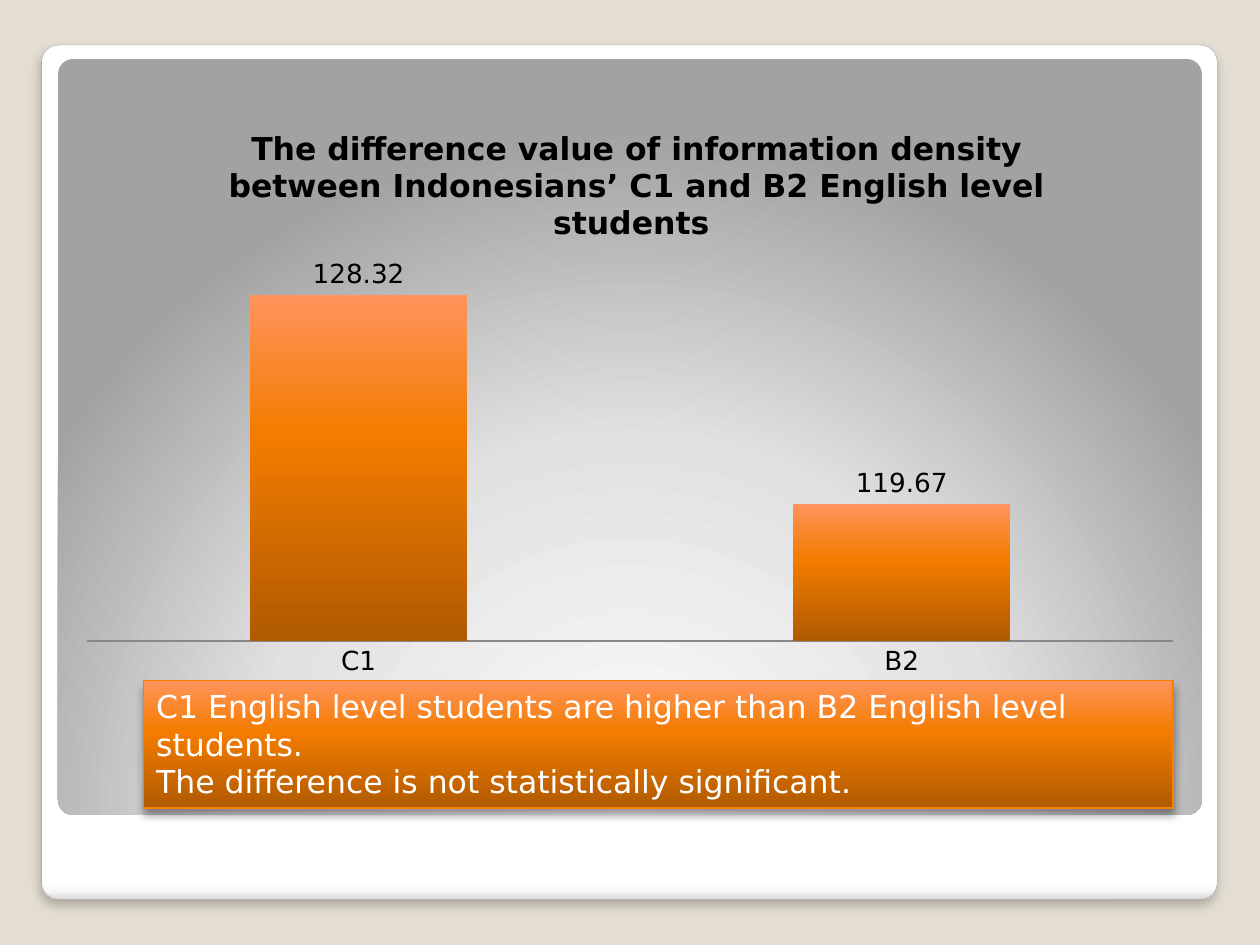
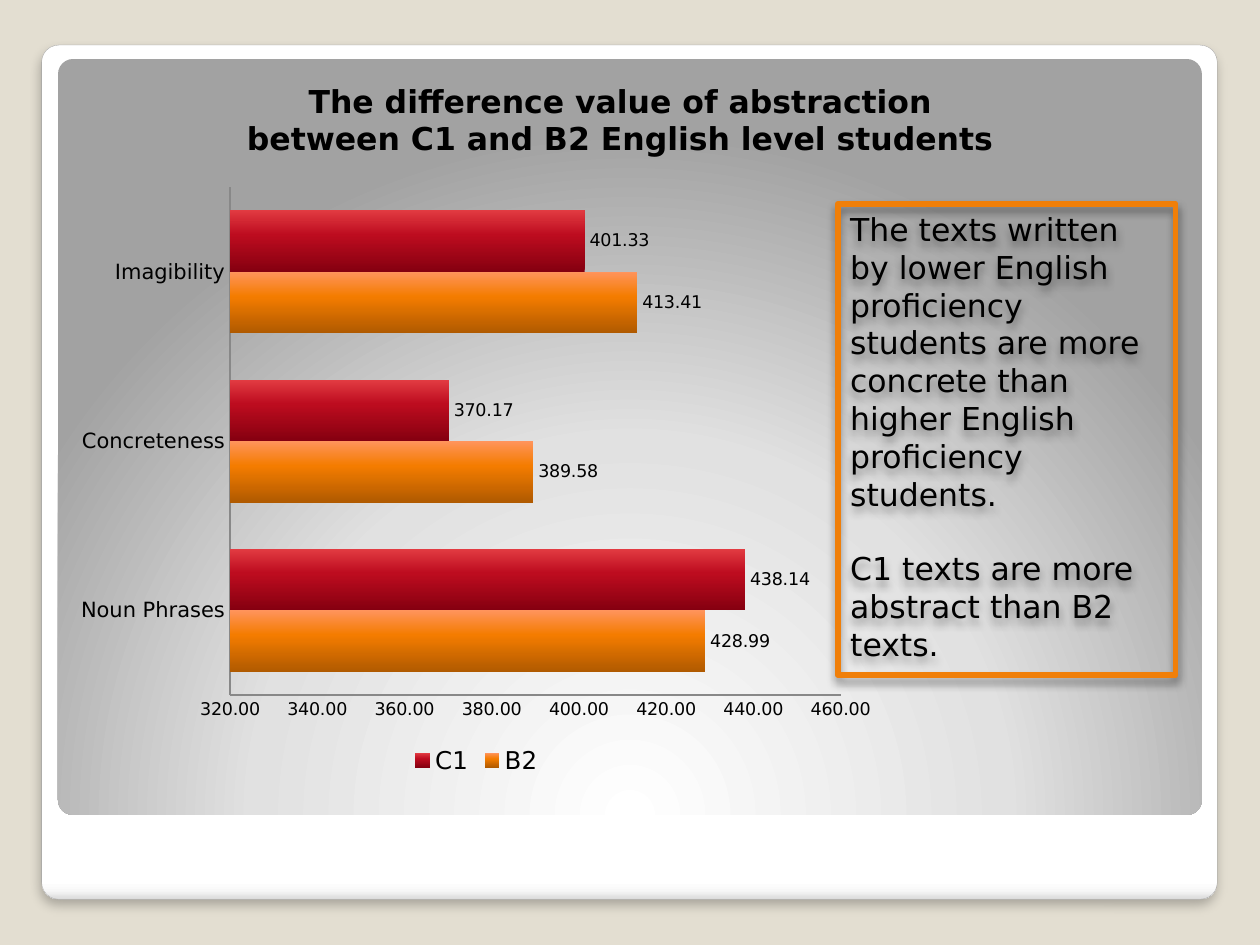
import pptx
import pptx.chart.data
import pptx.dml.color
import pptx.enum.chart
import pptx.enum.shapes
import pptx.enum.text
import pptx.oxml.ns
import pptx.util
from lxml import etree

Cm, Pt = pptx.util.Cm, pptx.util.Pt
RGB = pptx.dml.color.RGBColor
KIND = pptx.enum.chart.XL_CHART_TYPE
SHAPE = pptx.enum.shapes.MSO_SHAPE
ALIGN = pptx.enum.text.PP_ALIGN
qn = pptx.oxml.ns.qn

FONT = "DejaVu Sans"
SAND = RGB(0xE3, 0xDE, 0xD1)
WHITE = RGB(0xFF, 0xFF, 0xFF)
BLACK = RGB(0, 0, 0)
GREY = RGB(0x88, 0x88, 0x88)
EDGE = RGB(0xA4, 0xA4, 0xA4)
AMBER = RGB(0xF9, 0x7F, 0x00)
ORANGE = RGB(0xF0, 0x7F, 0x09)

# Gradient stops: (percent, colour)
CARD = [(0, WHITE), (98, WHITE), (99, RGB(0xF7, 0xF7, 0xF7)), (100, RGB(0xDA, 0xDA, 0xDA))]
PANEL = [(0, WHITE), (55, RGB(0xE1, 0xE1, 0xE1)), (100, RGB(0xA2, 0xA2, 0xA2))]
FLAME = [(0, RGB(0xB0, 0x5A, 0x00)), (60, RGB(0xF4, 0x7C, 0x00)), (100, RGB(0xFF, 0x94, 0x5C))]
CHERRY = [(0, RGB(0x85, 0x00, 0x10)), (60, RGB(0xBD, 0x0C, 0x1F)), (100, RGB(0xE2, 0x3B, 0x42))]

# Shadows: opacity percent, blur and distance in points
SOFT = (25, 6, 4)
DEEP = (40, 5.2, 3)

DENSITY = dict(
    kind=KIND.COLUMN_CLUSTERED,
    at=(1.3, 1.93, 22.81, 11.99),
    cats=["C1", "B2"],
    series=[("Series 1", [128.32, 119.67], FLAME)],
    scale=(114, 130, 2), gap=150, plot=(0.02, 0.267, 0.96, 0.65),
    cat_size=15, label_size=15, hide=True,
    title="The difference value of information density between "
          "Indonesians’ C1 and B2 English level students ",
)
DENSITY_NOTE = [
    "C1 English level students are higher than B2 English level students.",
    "The difference is not statistically significant.",
]
ABSTRACT = dict(
    kind=KIND.BAR_CLUSTERED,
    at=(1.3, 3.53, 16.61, 12.19),
    cats=["Noun Phrases", "Concreteness", "Imagibility"],
    series=[("B2", [428.99, 389.58, 413.41], FLAME),
            ("C1", [438.14, 370.17, 401.33], CHERRY)],
    scale=(320, 460, 20), gap=75, plot=(0.201, 0.02, 0.741, 0.84),
    cat_size=12, label_size=10, legend=True,
)
ABSTRACT_TITLE = [
    "The difference value of abstraction ",
    "between C1 and B2 English level students ",
]
ABSTRACT_NOTE = [
    "The texts written by lower English proficiency students are more "
    "concrete than higher English proficiency students.",
    "C1 texts are more abstract than B2 texts.",
]


def node(parent, tag, **attrs):
    item = etree.SubElement(parent, qn(tag))
    for key, value in attrs.items():
        item.set(key, str(value))
    return item


def blend(fill, props, stops, angle=None):
    """Fill with a linear gradient, or a round one when no angle is given."""
    fill.solid()
    grad = etree.Element(qn("a:gradFill"), rotWithShape="1")
    group = node(grad, "a:gsLst")
    for percent, color in stops:
        stop = node(group, "a:gs", pos=percent * 1000)
        node(stop, "a:srgbClr", val=color)
    if angle is None:
        round_ = node(grad, "a:path", path="circle")
        node(round_, "a:fillToRect", l=50000, t=175000, r=50000, b=-75000)
    else:
        node(grad, "a:lin", ang=angle * 60000, scaled=0)
    props.replace(props.find(qn("a:solidFill")), grad)


def write(frame, lines, size=18, color=BLACK, bold=False, align=ALIGN.LEFT, gap=0):
    frame.word_wrap = True
    frame.vertical_anchor = pptx.enum.text.MSO_ANCHOR.TOP
    for i, line in enumerate(lines):
        para = frame.add_paragraph() if i else frame.paragraphs[0]
        para.alignment = align
        para.space_before = Pt(gap if i else 0)
        run = para.add_run()
        run.text = line
        font = run.font
        font.name, font.size, font.bold = FONT, Pt(size), bold
        font.color.rgb = color


def block(slide, form, at, stops=None, angle=None, line=None, width=1, shade=None):
    shape = slide.shapes.add_shape(form, *map(Cm, at))
    props = shape._element.spPr
    shape.shadow.inherit = False
    if stops:
        blend(shape.fill, props, stops, angle)
    else:
        shape.fill.background()
    if line:
        shape.line.color.rgb = line
        shape.line.width = Pt(width)
    else:
        shape.line.fill.background()
    if shade:
        alpha, blur, dist = shade
        drop = node(props.find(qn("a:effectLst")), "a:outerShdw", blurRad=Pt(blur),
                    dist=Pt(dist), dir=90 * 60000, algn="t", rotWithShape=0)
        node(node(drop, "a:srgbClr", val=BLACK), "a:alpha", val=alpha * 1000)
    return shape


def place(part, spots, after=None):
    """Give a chart part a manual layout."""
    old = part.find(qn("c:layout"))
    if old is not None:
        part.remove(old)
    layout = etree.Element(qn("c:layout"))
    manual = node(layout, "c:manualLayout")
    if len(spots) == 4:
        node(manual, "c:layoutTarget", val="inner")
    for key in ("xMode", "yMode"):
        node(manual, "c:" + key, val="edge")
    for key, value in zip("xywh", spots):
        node(manual, "c:" + key, val=value)
    if after is None:
        part.insert(0, layout)
    else:
        after.addnext(layout)


def graph(slide, kind, at, cats, series, scale, gap, plot, cat_size, label_size,
          hide=False, title=None, legend=False):
    data = pptx.chart.data.CategoryChartData(number_format="0.00")
    data.categories = cats
    for name, values, _ in series:
        data.add_series(name, values)
    chart = slide.shapes.add_chart(kind, *map(Cm, at), data).chart
    chart.font.name, chart.font.size = FONT, Pt(10)
    chart.font.color.rgb = BLACK

    chart.has_title = title is not None
    if title:
        write(chart.chart_title.text_frame, [title], bold=True, align=ALIGN.CENTER)
        head = chart.chart_title._element
        place(head, (0.14, 0.045), head.find(qn("c:tx")))
    chart.has_legend = legend
    if legend:
        chart.legend.position = pptx.enum.chart.XL_LEGEND_POSITION.BOTTOM
        chart.legend.include_in_layout = False
        chart.legend.font.size = Pt(14)

    values = chart.value_axis
    values.minimum_scale, values.maximum_scale, values.major_unit = scale
    values.has_major_gridlines = False
    values.tick_labels.number_format = "0.00"
    values.tick_labels.number_format_is_linked = False
    values.visible = not hide
    chart.category_axis.tick_labels.font.size = Pt(cat_size)
    for axis in (values, chart.category_axis):
        axis.major_tick_mark = pptx.enum.chart.XL_TICK_MARK.NONE
        axis.format.line.color.rgb = GREY
        axis.format.line.width = Pt(0.75)

    bars = chart.plots[0]
    bars.vary_by_categories = False
    bars.gap_width, bars.overlap = gap, 0
    bars.has_data_labels = True
    labels = bars.data_labels
    labels.show_value = True
    labels.number_format, labels.number_format_is_linked = "0.00", False
    labels.position = pptx.enum.chart.XL_LABEL_POSITION.OUTSIDE_END
    labels.font.size = Pt(label_size)
    for bar, (_, _, stops) in zip(bars.series, series):
        fill = bar.format.fill
        fill.solid()
        blend(fill, bar._element.find(qn("c:spPr")), stops, 270)
    place(chart._chartSpace.find(".//" + qn("c:plotArea")), plot)


def start(deck):
    """Add a slide with the white card and the grey panel."""
    slide = deck.slides.add_slide(deck.slide_layouts[6])
    slide.background.fill.solid()
    slide.background.fill.fore_color.rgb = SAND
    card = block(slide, SHAPE.ROUNDED_RECTANGLE, (0.84, 0.91, 23.7, 17.22),
                 CARD, 90, EDGE, 0.16, SOFT)
    panel = block(slide, SHAPE.ROUNDED_RECTANGLE, (1.17, 1.19, 23.06, 15.24), PANEL)
    for shape in (card, panel):
        shape.adjustments[0] = 0.02
    return slide


def main():
    deck = pptx.Presentation()
    deck.slide_width, deck.slide_height = Cm(25.4), Cm(19.05)

    slide = start(deck)
    note = block(slide, SHAPE.FLOWCHART_PROCESS, (2.9, 13.72, 20.75, 2.57),
                 FLAME, 270, AMBER, 0.75, DEEP)
    write(note.text_frame, DENSITY_NOTE, color=WHITE)
    graph(slide, **DENSITY)

    slide = start(deck)
    title = slide.shapes.add_textbox(*map(Cm, (2.11, 1.52, 21.01, 2.57)))
    write(title.text_frame, ABSTRACT_TITLE, bold=True, align=ALIGN.CENTER)
    note = block(slide, SHAPE.RECTANGLE, (16.89, 4.11, 6.81, 9.5),
                 line=ORANGE, width=3.35, shade=DEEP)
    write(note.text_frame, ABSTRACT_NOTE, gap=21)
    graph(slide, **ABSTRACT)

    deck.save("out.pptx")


if __name__ == "__main__":
    main()
